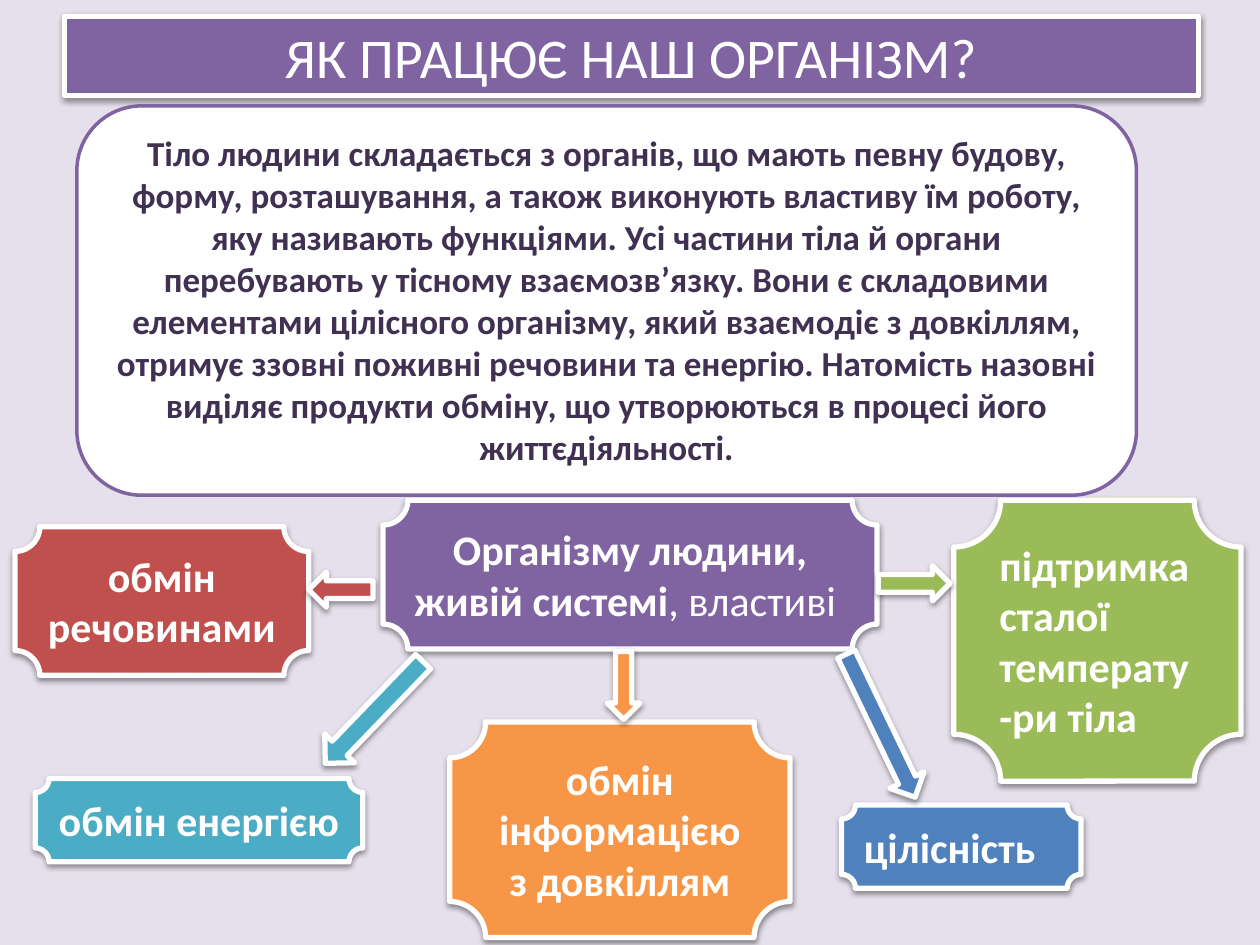
"""Build the slide on how the human body works."""
from lxml import etree
from pptx import Presentation
from pptx.dml.color import RGBColor
from pptx.enum.shapes import MSO_SHAPE
from pptx.enum.text import MSO_ANCHOR, MSO_AUTO_SIZE, PP_ALIGN
from pptx.oxml.ns import qn
from pptx.util import Inches, Pt

ROUND, PLAQUE = MSO_SHAPE.ROUNDED_RECTANGLE, MSO_SHAPE.PLAQUE
LEFT, RIGHT, DOWN = MSO_SHAPE.LEFT_ARROW, MSO_SHAPE.RIGHT_ARROW, MSO_SHAPE.DOWN_ARROW
TOP, MIDDLE = MSO_ANCHOR.TOP, MSO_ANCHOR.MIDDLE
FIXED, GROW = MSO_AUTO_SIZE.NONE, MSO_AUTO_SIZE.SHAPE_TO_FIT_TEXT
START, CENTER = PP_ALIGN.LEFT, PP_ALIGN.CENTER

HUES = {
    "back": "E6E0EC", "white": "FFFFFF", "black": "000000", "ink": "403152",
    "purple": "8064A2", "blue": "4F81BD", "red": "C0504D",
    "green": "9BBB59", "teal": "4BACC6", "orange": "F79646",
}
HUE = {name: RGBColor.from_string(code) for name, code in HUES.items()}
SHADE = {"blurRad": "40000", "dist": "20000", "dir": "5400000", "rotWithShape": "0"}

deck = Presentation()
deck.slide_width, deck.slide_height = Inches(10), Inches(7.5)
COL, ROW = deck.slide_width / 100, deck.slide_height / 75
slide = deck.slides.add_slide(deck.slide_layouts[5])
slide.background.fill.solid()
slide.background.fill.fore_color.rgb = HUE["back"]


def paint(shape, fill, line="white", width=3, shade=True):
    shape.fill.solid()
    shape.fill.fore_color.rgb = HUE[fill]
    shape.line.color.rgb = HUE[line]
    shape.line.width = Pt(width)
    shape.shadow.inherit = False
    if shade:
        effects = shape._element.spPr.find(qn("a:effectLst"))
        outer = etree.SubElement(effects, qn("a:outerShdw"), SHADE)
        tint = etree.SubElement(outer, qn("a:srgbClr"), val=HUES["black"])
        etree.SubElement(tint, qn("a:alpha"), val="38000")


def write(shape, runs, size=24, hue="white", align=CENTER, anchor=TOP, fit=GROW):
    frame = shape.text_frame
    form = {"word_wrap": True, "vertical_anchor": anchor, "auto_size": fit}
    for key, value in form.items():
        setattr(frame, key, value)
    para = frame.paragraphs[0]
    para.alignment = align
    for text, bold in runs:
        run = para.add_run()
        run.text = text
        for key, value in {"name": "Calibri", "size": Pt(size), "bold": bold}.items():
            setattr(run.font, key, value)
        run.font.color.rgb = HUE[hue]


title = slide.shapes.title
place = {"left": 5.1 * COL, "top": 1.3 * ROW, "width": 90 * COL, "height": 6.3 * ROW}
for key, value in place.items():
    setattr(title, key, int(value))
paint(title, "purple")
write(title, [("ЯК ПРАЦЮЄ НАШ ОРГАНІЗМ?", False)], 32, anchor=MIDDLE, fit=FIXED)

story = (
    "Тіло людини складається з органів, що мають певну будову, форму, "
    "розташування, а також виконують властиву їм роботу, яку називають "
    "функціями. Усі частини тіла й органи перебувають у тісному взаємозв’язку. "
    "Вони є складовими елементами цілісного організму, який взаємодіє з "
    "довкіллям, отримує ззовні поживні речовини та енергію. Натомість назовні "
    "виділяє продукти обміну, що утворюються в процесі його життєдіяльності."
)
intro = slide.shapes.add_shape(
    ROUND, int(6.1 * COL), int(8.4 * ROW), int(84.1 * COL), int(30.9 * ROW))
paint(intro, "white", "purple", 2, False)
write(intro, [(story, True)], 20, "ink")

plaques = [
    (30.4, 39.7, 39.2, 11.8, "purple", CENTER,
     [("Організму людини, живій системі", True), (", властиві ", False)]),
    (66.8, 63.9, 19, 6.6, "blue", START, [("цілісність", True)]),
    (1.2, 41.8, 23.3, 11.8, "red", CENTER, [("обмін речовинами ", True)]),
    (75.7, 39.7, 22.8, 22.3, "green", START,
     [("підтримка сталої температу-ри тіла", True)]),
    (2.8, 61.8, 26, 6.6, "teal", CENTER, [("обмін енергією", True)]),
    (35.7, 57.3, 27, 17.1, "orange", CENTER,
     [("обмін інформацією з довкіллям", True)]),
]
for x, y, wide, high, hue, align, runs in plaques:
    plaque = slide.shapes.add_shape(
        PLAQUE, int(x * COL), int(y * ROW), int(wide * COL), int(high * ROW))
    paint(plaque, hue)
    write(plaque, runs, align=align)

arrows = [
    (LEFT, 24.5, 45.4, 5.1, 2.8, 0, "red"),
    (RIGHT, 69.7, 44.9, 5.7, 2.8, 0, "green"),
    (DOWN, 48.2, 51.7, 2.6, 5.4, 0, "orange"),
    (LEFT, 24.1, 54.9, 11.2, 3.3, 313.9, "teal"),
    (RIGHT, 63.6, 56.1, 12.6, 3, 64.3, "blue"),
]
for kind, x, y, wide, high, turn, hue in arrows:
    arrow = slide.shapes.add_shape(
        kind, int(x * COL), int(y * ROW), int(wide * COL), int(high * ROW))
    arrow.rotation = turn
    paint(arrow, hue)

deck.save("out.pptx")
